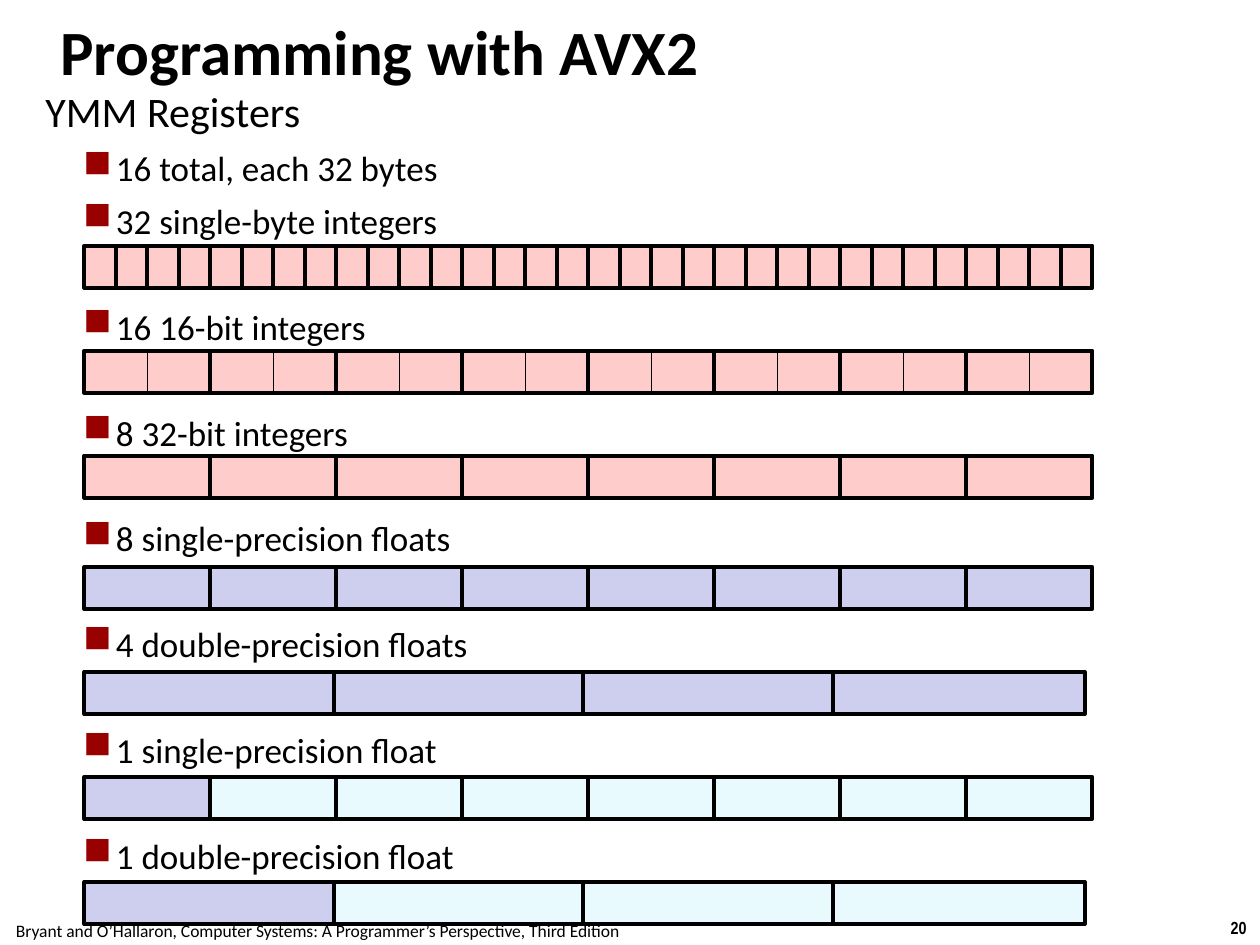
from pptx import Presentation
from pptx.dml.color import RGBColor as Color
from pptx.enum.shapes import MSO_SHAPE as Shape
from pptx.enum.text import MSO_ANCHOR as Anchor, PP_ALIGN as Align
from pptx.oxml.ns import qn
from pptx.util import Inches, Pt
from lxml.etree import SubElement

THEME = {
    "ink": "000000", "bullet": "990000",
    "integer": "FFCCCC", "float": "CECEEF", "unused": "E9FAFF",
    "body font": "Calibri", "number font": "Arial Narrow",
    "title": 36, "heading": 24, "item": 20, "small": 10,
    "thick": 2.25, "thin": 0.5,
}
COLUMN = 0.25          # width of one byte in a register
LEFT = 0.67
ROW_HEIGHT = 1 / 3
ROW_PITCH = 5 / 6

deck = Presentation()
deck.slide_width, deck.slide_height = Inches(10), Inches(7.5)
page = deck.slides.add_slide(deck.slide_layouts[6])


def add_text_box(left, top, width, height, inset=None, **frame_format):
    box = page.shapes.add_textbox(*map(Inches, (left, top, width, height)))
    frame = box.text_frame
    if inset is not None:
        for side in ("left", "top", "right", "bottom"):
            setattr(frame, f"margin_{side}", Inches(inset))
    for name, value in frame_format.items():
        setattr(frame, name, value)
    return frame


def write(para, text, size, font="body font", bold=False, **para_format):
    span = para.add_run()
    span.text = text
    look = {"size": Pt(THEME[size]), "name": THEME[font], "bold": bold}
    for name, value in look.items():
        setattr(span.font, name, value)
    span.font.color.rgb = Color.from_string(THEME["ink"])
    for name, value in para_format.items():
        setattr(para, name, value)


# Page number and footer, behind everything else
number = add_text_box(9.66, 7.23, 0.34, 0.27, word_wrap=False)
write(number.paragraphs[0], "20", "small", "number font", True, alignment=Align.CENTER)
footer = add_text_box(-0.02, 7.25, 5.08, 0.27, word_wrap=False)
write(footer.paragraphs[0],
      "Bryant and O’Hallaron, Computer Systems: A Programmer’s Perspective, Third Edition",
      "small", alignment=Align.CENTER)

# Title
title = add_text_box(0.44, -0.03, 9.53, 0.85, 0.04,
                     word_wrap=True, vertical_anchor=Anchor.MIDDLE)
write(title.paragraphs[0], "Programming with AVX2", "title", bold=True)

# Heading and bullets; the wider gaps leave room for the registers
body = add_text_box(0.32, 0.62, 9.09, 6.72, 0.04, word_wrap=True)
write(body.paragraphs[0], "YMM Registers", "heading",
      line_spacing=1.05, space_before=Pt(6))
items = [
    ("16 total, each 32 bytes", 5),
    ("32 single-byte integers", 5),
    ("16 16-bit integers", 35.2),
    ("8 32-bit integers", 35.2),
    ("8 single-precision floats", 35.2),
    ("4 double-precision floats", 35.2),
    ("1 single-precision float", 35.2),
    ("1 double-precision float", 35.2),
]
for text, gap in items:
    para = body.add_paragraph()
    write(para, text, "item", level=1, line_spacing=1.05, space_before=Pt(gap))
    props = para._p.get_or_add_pPr()
    props.set("marL", str(Inches(0.56)))
    props.set("indent", str(Inches(-0.26)))
    bullet_color = SubElement(props, qn("a:buClr"))
    SubElement(bullet_color, qn("a:srgbClr"), val=THEME["bullet"])
    SubElement(props, qn("a:buSzPct"), val="110000")
    SubElement(props, qn("a:buChar"), char="■")

# Registers: top, columns per cell, step in inches, line, fill of each cell
integer_top, float_top = 1.95, 4.5
registers = [
    (integer_top, 1, 0.25, "thick", ["integer"] * 32),
    (integer_top + ROW_PITCH, 2, 0.5, "thin", ["integer"] * 16),
    (integer_top + ROW_PITCH, 4, 1, "thick", [None] * 8),
    (integer_top + 2 * ROW_PITCH, 4, 1, "thick", ["integer"] * 8),
    (float_top, 4, 1, "thick", ["float"] * 8),
    (float_top + ROW_PITCH, 8, 1.98, "thick", ["float"] * 4),
    (float_top + 2 * ROW_PITCH, 4, 1, "thick", ["float"] + ["unused"] * 7),
    (float_top + 3 * ROW_PITCH, 8, 1.98, "thick", ["float"] + ["unused"] * 3),
]
for top, columns, step, weight, fills in registers:
    for index, fill in enumerate(fills):
        cell = page.shapes.add_shape(
            Shape.RECTANGLE, Inches(LEFT + index * step), Inches(top),
            Inches(columns * COLUMN), Inches(ROW_HEIGHT))
        cell.shadow.inherit = False
        if fill:
            cell.fill.solid()
            cell.fill.fore_color.rgb = Color.from_string(THEME[fill])
        else:
            cell.fill.background()
        cell.line.color.rgb = Color.from_string(THEME["ink"])
        cell.line.width = Pt(THEME[weight])

deck.save("out.pptx")
